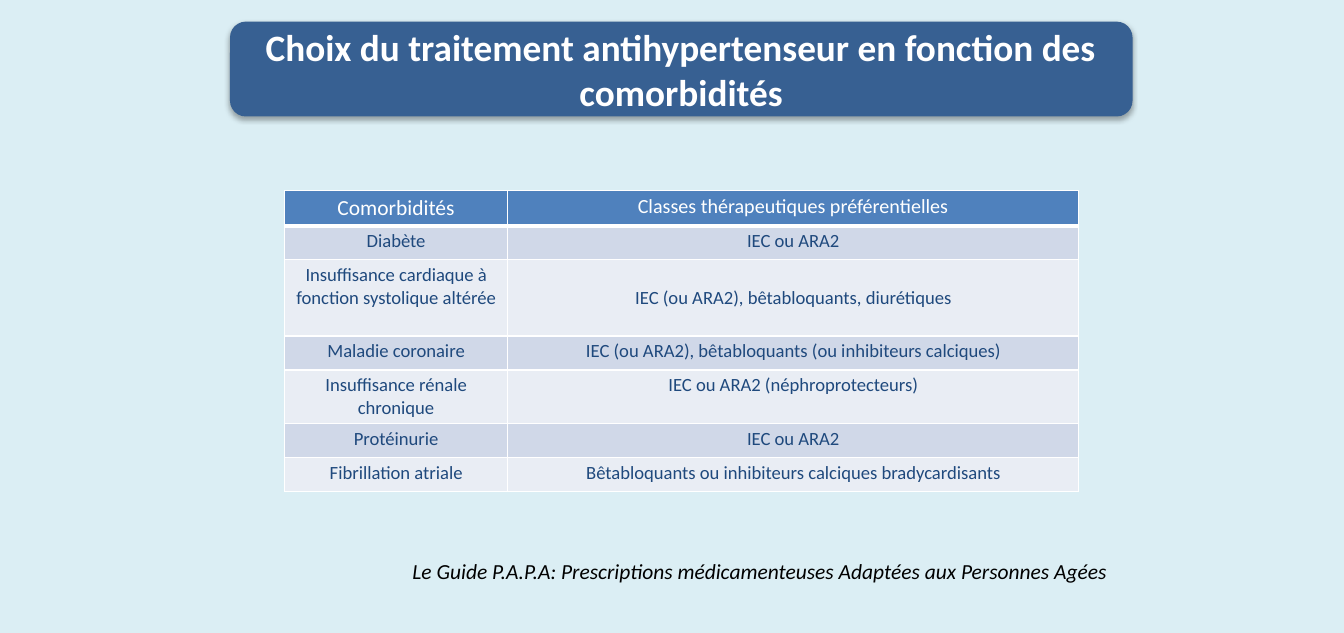
import pptx
import pptx.dml.color
import pptx.enum.shapes
import pptx.enum.text
import pptx.oxml
import pptx.oxml.ns
import pptx.util

PX = 9144  # 100 px to the inch
NS = pptx.oxml.ns.nsdecls("a")
Pt = pptx.util.Pt
MID = pptx.enum.text.MSO_ANCHOR.MIDDLE
CENTER = pptx.enum.text.PP_ALIGN.CENTER


def color(code):
    return pptx.dml.color.RGBColor.from_string(code)


def write(frame, text, size, code, bold=False, italic=False, align=None):
    para = frame.paragraphs[0]
    para.text = text
    para.alignment = align
    font = para.font
    font.name, font.size = "Calibri", Pt(size)
    font.bold, font.italic = bold, italic
    font.color.rgb = color(code)


deck = pptx.Presentation()
deck.slide_width, deck.slide_height = 1303 * PX, 614 * PX
slide = deck.slides.add_slide(deck.slide_layouts[6])
slide.background.fill.solid()
slide.background.fill.fore_color.rgb = color("DBEEF4")

# Title banner with a soft shadow
title = slide.shapes.add_shape(
    pptx.enum.shapes.MSO_SHAPE.ROUNDED_RECTANGLE,
    223 * PX, 21 * PX, 875 * PX, 92 * PX)
title.fill.solid()
title.fill.fore_color.rgb = color("376092")
title.line.fill.background()
title.shadow.inherit = False
effects = title.element.spPr.find(pptx.oxml.ns.qn("a:effectLst"))
effects.append(pptx.oxml.parse_xml(
    f'<a:outerShdw {NS} blurRad="{Pt(3.5)}" dist="{Pt(2.2)}" dir="5400000" '
    'rotWithShape="0"><a:srgbClr val="000000"><a:alpha val="32000"/>'
    '</a:srgbClr></a:outerShdw>'))
title.text_frame.word_wrap = True
title.text_frame.vertical_anchor = MID
write(title.text_frame,
      "Choix du traitement antihypertenseur en fonction des comorbidités",
      26, "FFFFFF", bold=True, align=CENTER)

# Table: row height, comorbidity, preferred classes
rows = [
    (34, "Comorbidités", "Classes thérapeutiques préférentielles"),
    (33, "Diabète", "IEC ou ARA2"),
    (74, "Insuffisance cardiaque à fonction systolique altérée",
     "IEC (ou ARA2), bêtabloquants, diurétiques"),
    (33, "Maladie coronaire",
     "IEC (ou ARA2), bêtabloquants (ou inhibiteurs calciques)"),
    (52, "Insuffisance rénale chronique", "IEC ou ARA2 (néphroprotecteurs)"),
    (33, "Protéinurie", "IEC ou ARA2"),
    (33, "Fibrillation atriale",
     "Bêtabloquants ou inhibiteurs calciques bradycardisants"),
]
table = slide.shapes.add_table(
    len(rows), 2, 276 * PX, 185 * PX, 770 * PX, 292 * PX).table
for col, width in zip(table.columns, (216, 554)):
    col.width = width * PX

for r, (height, *texts) in enumerate(rows):
    table.rows[r].height = height * PX
    for c, text in enumerate(texts):
        cell = table.cell(r, c)
        cell.margin_left = cell.margin_right = 10 * PX
        cell.margin_top = cell.margin_bottom = 4 * PX
        if r == 0:
            fill, ink, size = "4F81BD", "FFFFFF", (15, 14)[c]
        else:
            fill, ink, size = ("E9EDF4", "D0D8E8")[r % 2], "1F497D", 13
        write(cell.text_frame, text, size, ink, align=CENTER)
        if (r, c) == (2, 1):
            cell.vertical_anchor = MID

        # White borders, thicker under the header
        props = cell._tc.get_or_add_tcPr()
        for side in "LRTB":
            thick = 3 if (r, side) in ((0, "B"), (1, "T")) else 1
            props.append(pptx.oxml.parse_xml(
                f'<a:ln{side} {NS} w="{Pt(thick)}"><a:solidFill>'
                f'<a:srgbClr val="FFFFFF"/></a:solidFill></a:ln{side}>'))
        cell.fill.solid()
        cell.fill.fore_color.rgb = color(fill)

# Reference
note = slide.shapes.add_textbox(390 * PX, 536 * PX, 699 * PX, 35 * PX)
note.text_frame.word_wrap = False
write(note.text_frame,
      "Le Guide P.A.P.A: Prescriptions médicamenteuses Adaptées aux "
      "Personnes Agées", 15, "000000", italic=True)

deck.save("out.pptx")
